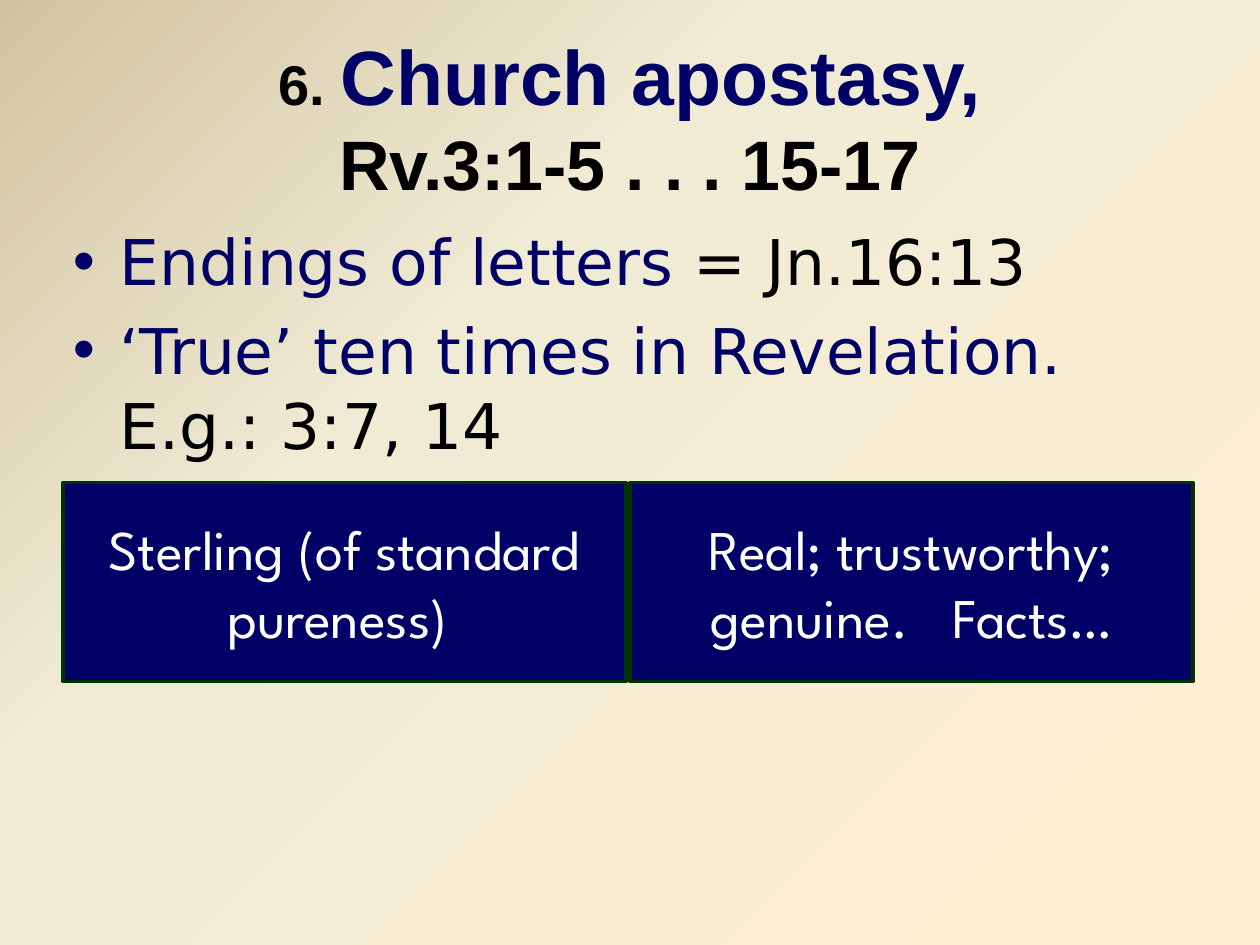
"""Build the church apostasy slide with its title, bullets and two meaning boxes."""
from copy import deepcopy
from typing import NamedTuple

from lxml import etree
from pptx import Presentation
from pptx import util as u
from pptx.dml.color import RGBColor
from pptx.enum import shapes, text
from pptx.oxml.ns import qn

NAVY, BLACK, WHITE, GREEN = "000066", "000000", "FFFFFF", "003300"
BACKGROUND = [(0, "D1C39F"), (0.35, "F0EBD5"), (1, "FFEFD1")]


class Frame(NamedTuple):
    left: float
    top: float
    width: float
    height: float


class Span(NamedTuple):
    words: str
    color: str
    size: float
    font: str
    bold: bool = False
    spacing: int = 0


def rgb(value: str) -> RGBColor:
    return RGBColor.from_string(value)


def set_all(target, values: dict) -> None:
    for name, value in values.items():
        setattr(target, name, value)


def paint_background(page) -> None:
    fill = page.background.fill
    fill.gradient()
    fill.gradient_angle = 315
    stop_list = page._element.find(".//" + qn("a:gsLst"))
    stop_list.insert(1, deepcopy(stop_list[0]))
    for stop, (position, color) in zip(fill.gradient_stops, BACKGROUND):
        stop.position = position
        stop.color.rgb = rgb(color)


def add_spans(para, spans: list[Span]) -> None:
    for item in spans:
        if item.words == "\n":
            para.add_line_break()
            continue
        span = para.add_run()
        span.text = item.words
        set_all(span.font, {"name": item.font, "size": u.Pt(item.size), "bold": item.bold})
        span.font.color.rgb = rgb(item.color)
        if item.spacing:
            span.font._element.set("spc", str(item.spacing))


def add_bullet(para) -> None:
    properties = para._p.get_or_add_pPr()
    indent = u.Cm(0.95)
    properties.set("marL", str(indent))
    properties.set("indent", str(-indent))
    etree.SubElement(properties, qn("a:buFont"), typeface="Arial")
    etree.SubElement(properties, qn("a:buChar"), char="•")


def fill_text(box, paragraphs: list[list[Span]], centered: bool = True) -> None:
    middle, top = text.MSO_ANCHOR.MIDDLE, text.MSO_ANCHOR.TOP
    set_all(box.text_frame, {"word_wrap": True, "vertical_anchor": middle if centered else top})
    for index, spans in enumerate(paragraphs):
        para = box.text_frame.add_paragraph() if index else box.text_frame.paragraphs[0]
        para.alignment = text.PP_ALIGN.CENTER if centered else text.PP_ALIGN.LEFT
        if index:
            para.space_before = u.Pt(7.2)
        if not centered:
            add_bullet(para)
        add_spans(para, spans)


def add_text(page, frame: Frame, paragraphs: list[list[Span]], centered: bool = True) -> None:
    box = page.shapes.add_textbox(*map(u.Cm, frame))
    fill_text(box, paragraphs, centered)


def add_meaning(page, frame: Frame, spans: list[Span]) -> None:
    box = page.shapes.add_shape(shapes.MSO_SHAPE.RECTANGLE, *map(u.Cm, frame))
    box.shadow.inherit = False
    box.fill.solid()
    box.fill.fore_color.rgb = rgb(NAVY)
    box.line.color.rgb = rgb(GREEN)
    box.line.width = u.Pt(2)
    fill_text(box, [spans])


def main() -> None:
    deck = Presentation()
    set_all(deck, {"slide_width": u.Cm(25.4), "slide_height": u.Cm(19.05)})
    page = deck.slides.add_slide(deck.slide_layouts[6])
    paint_background(page)

    title = [
        Span("6. ", BLACK, 32, "Arial", True),
        Span("Church apostasy,", NAVY, 44, "Arial", True),
        Span("\n", NAVY, 44, "Arial"),
        Span("Rv.3:1-5 . . . 15-17", BLACK, 40, "Arial", True),
    ]
    add_text(page, Frame(1.27, 0.76, 22.86, 3.18), [title])

    points = [
        ("Endings of letters ", "= Jn.16:13"),
        ("‘True’ ten times in Revelation. ", "E.g.: 3:7, 14"),
    ]
    bullets = [
        [Span(words, color, 36, "DejaVu Sans") for words, color in zip(point, (NAVY, BLACK))]
        for point in points
    ]
    add_text(page, Frame(1.22, 4.37, 22.86, 13.84), bullets, centered=False)

    meanings = [
        [("Sterling (of standard pureness) ", 0)],
        [("Real; trustworthy; genuine.", 0), (" ", 1700), ("Facts…", 0)],
    ]
    for column, parts in enumerate(meanings):
        spans = [Span(words, WHITE, 32, "League Spartan", spacing=gap) for words, gap in parts]
        add_meaning(page, Frame(1.27 + column * 11.43, 9.73, 11.35, 4.01), spans)

    deck.save("out.pptx")


if __name__ == "__main__":
    main()
